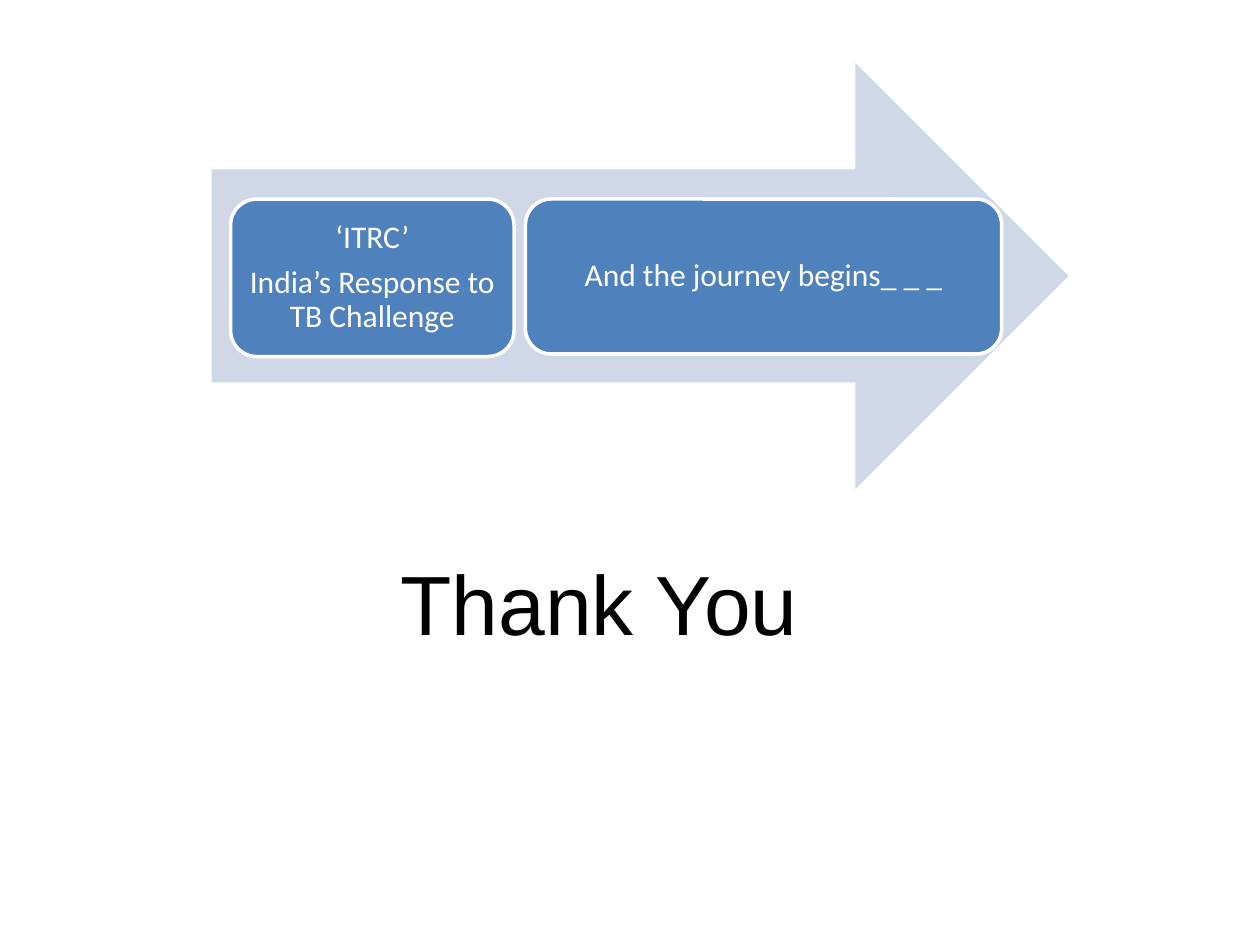
import pptx
import pptx.util
import pptx.dml.color
import pptx.enum.shapes
import pptx.enum.text
from pptx.util import Inches

COLORS = {"arrow": "D0D8E8", "step": "4F81BD", "light": "FFFFFF", "dark": "000000"}
SHAPES = pptx.enum.shapes.MSO_SHAPE
STEP_FRAME = {
    "word_wrap": True,
    "vertical_anchor": pptx.enum.text.MSO_ANCHOR.MIDDLE,
    **{f"margin_{side}": Inches(0.07) for side in ("left", "top", "right", "bottom")},
}
STEP_PARAGRAPH = {
    "alignment": pptx.enum.text.PP_ALIGN.CENTER,
    "line_spacing": 0.9,
    "space_after": pptx.util.Pt(6.3),
}
STEP_FONT = {"name": "Calibri", "size": pptx.util.Pt(18)}
CLOSING_FRAME = {"word_wrap": True, "margin_left": Inches(1.68)}
CLOSING_FONT = {"name": "Arial", "size": pptx.util.Pt(48)}


def color(name):
    """Return the named colour."""
    return pptx.dml.color.RGBColor.from_string(COLORS[name])


def apply(target, values):
    """Set each attribute of the target from a dict."""
    for name, value in values.items():
        setattr(target, name, value)


def write(frame, lines, frame_format, paragraph_format, font, font_color):
    """Fill a text frame with one formatted paragraph per line."""
    apply(frame, frame_format)
    for index, line in enumerate(lines):
        para = frame.add_paragraph() if index else frame.paragraphs[0]
        apply(para, paragraph_format)
        span = para.add_run()
        span.text = line
        apply(span.font, font)
        span.font.color.rgb = color(font_color)


def add_filled(page, kind, bounds, fill):
    """Add a flat preset shape without an outline."""
    shape = page.shapes.add_shape(kind, *map(Inches, bounds))
    shape.shadow.inherit = False
    shape.fill.solid()
    shape.fill.fore_color.rgb = color(fill)
    shape.line.fill.background()
    return shape


def add_step(page, bounds, lines):
    """Add a rounded, white-edged step with centred text."""
    step = add_filled(page, SHAPES.ROUNDED_RECTANGLE, bounds, "step")
    step.line.color.rgb = color("light")
    step.line.width = pptx.util.Pt(2)
    write(step.text_frame, lines, STEP_FRAME, STEP_PARAGRAPH, STEP_FONT, "light")


def add_closing(page, bounds, text):
    """Add the large closing words."""
    box = page.shapes.add_textbox(*map(Inches, bounds))
    write(box.text_frame, [text], CLOSING_FRAME, {}, CLOSING_FONT, "dark")


def main():
    """Build and save the closing slide."""
    deck = pptx.Presentation()
    deck.slide_width, deck.slide_height = Inches(10), Inches(7.5)
    page = deck.slides.add_slide(deck.slide_layouts.get_by_name("Blank"))
    add_filled(page, SHAPES.RIGHT_ARROW, (1.68, 0.5, 6.8, 3.38), "arrow")
    add_step(page, (1.83, 1.58, 2.25, 1.25), ["‘ITRC’", "India’s Response to TB Challenge"])
    add_step(page, (4.17, 1.58, 3.78, 1.23), ["And the journey begins_ _ _"])
    add_closing(page, (1.5, 4.33, 7, 0.91), "Thank You")
    deck.save("out.pptx")


if __name__ == "__main__":
    main()
